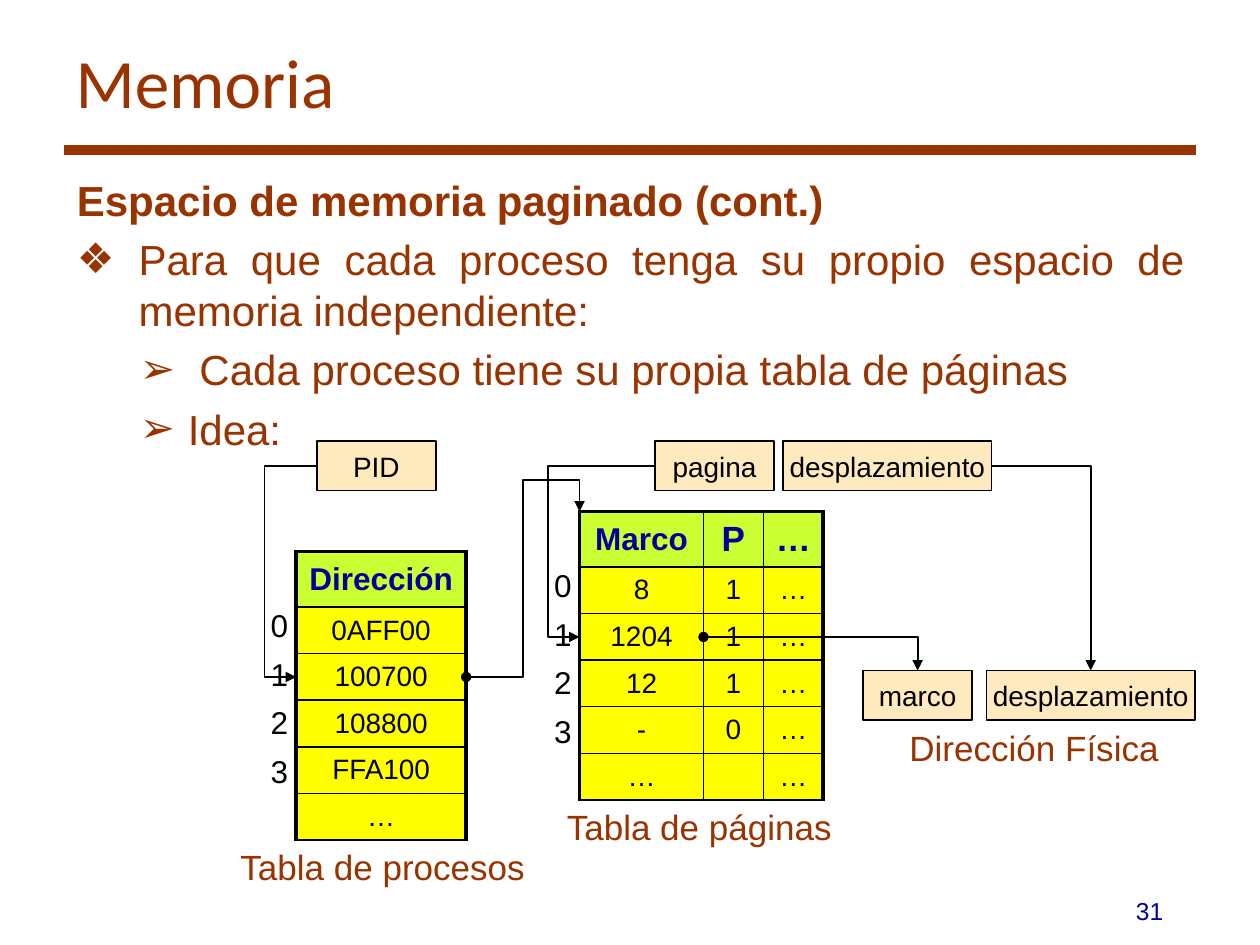
from lxml import etree
from pptx import Presentation
from pptx.dml.color import RGBColor
from pptx.enum.shapes import MSO_CONNECTOR, MSO_SHAPE
from pptx.enum.text import MSO_ANCHOR, MSO_AUTO_SIZE, PP_ALIGN
from pptx.oxml.ns import qn
from pptx.util import Pt

ELBOW, STRAIGHT = MSO_CONNECTOR.ELBOW, MSO_CONNECTOR.STRAIGHT
RECTANGLE = MSO_SHAPE.RECTANGLE
MIDDLE, TOP = MSO_ANCHOR.MIDDLE, MSO_ANCHOR.TOP
LEFT, CENTER, RIGHT, JUSTIFY = (PP_ALIGN.LEFT, PP_ALIGN.CENTER,
                                PP_ALIGN.RIGHT, PP_ALIGN.JUSTIFY)
NO_FIT = MSO_AUTO_SIZE.NONE

THEME = {
    "brown": RGBColor(0x99, 0x33, 0x00),
    "navy": RGBColor(0x00, 0x00, 0x99),
    "black": RGBColor(0x00, 0x00, 0x00),
    "cream": RGBColor(0xFF, 0xEA, 0xBF),
    "lime": RGBColor(0xCC, 0xFF, 0x33),
    "yellow": RGBColor(0xFF, 0xFF, 0x00),
    "title": {"name": "Calibri", "size": Pt(39.6)},
    "body": {"name": "Arial", "size": Pt(24)},
    "caption": {"name": "Arial", "size": Pt(20)},
    "index": {"name": "Arial", "size": Pt(18)},
    "cell": {"name": "Arial", "size": Pt(16)},
    "number": {"name": "Arial", "size": Pt(14)},
    "thick": 2.25, "thin": 1,
}

# Content: text, bullet, level, left margin, first-line indent, bold
TITLE = "Memoria"
BODY = [
    ("Espacio de memoria paginado (cont.)", None, 0, 0, 0, True),
    ("Para que cada proceso tenga su propio espacio de memoria independiente:",
     "❖", 0, 35.3, -35.3, False),
    (" Cada proceso tiene su propia tabla de páginas", "➢", 1, 63.4, -27.4, False),
    ("Idea:", "➢", 1, 63.4, -27.4, False),
]
PAGE_TABLE = {
    "left": 331.2, "top": 292.3, "widths": [70.8, 34.2, 34.2], "header_sizes": [18, 20, 20],
    "rows": [["Marco", "P", "…"], ["8", "1", "…"], ["1204", "1", "…"],
             ["12", "1", "…"], ["-", "0", "…"], ["…", "", "…"]],
}
PROCESS_TABLE = {
    "left": 169.2, "top": 315.2, "widths": [97.2], "header_sizes": [18],
    "rows": [["Dirección"], ["0AFF00"], ["100700"], ["108800"], ["FFA100"], ["…"]],
}
HEADER_HEIGHT, ROW_HEIGHT = 31.7, 26.64
BOX_HEIGHT, LOGICAL_TOP, PHYSICAL_TOP = 28.4, 252, 383.2
BOXES = {  # text, left, top, width
    "pid": ("PID", 181.2, LOGICAL_TOP, 67.8),
    "page": ("pagina", 374.4, LOGICAL_TOP, 67.8),
    "offset": ("desplazamiento", 447.6, LOGICAL_TOP, 119),
    "frame": ("marco", 493.2, PHYSICAL_TOP, 62.4),
    "physical_offset": ("desplazamiento", 563.8, PHYSICAL_TOP, 119),
}
CAPTIONS = [  # text, left, top, width
    ("Tabla de procesos", 130.3, 479.5, 181),
    ("Tabla de páginas", 316.8, 457, 170),
    ("Dirección Física", 512.6, 411.8, 193),
]


def set_values(target, values):
    for name, value in values.items():
        setattr(target, name, value)


def write(para, text, style, color, align=LEFT, bold=False):
    para.alignment = align
    span = para.add_run()
    span.text = text
    set_values(span.font, {**style, "bold": bold})
    span.font.color.rgb = color


def add_label(slide, text, left, top, width, height, style, color, align=LEFT):
    box = slide.shapes.add_textbox(Pt(left), Pt(top), Pt(width), Pt(height))
    box.text_frame.word_wrap = True
    write(box.text_frame.paragraphs[0], text, style, color, align)


def place(shape, left, top, width, height):
    set_values(shape, {"left": Pt(left), "top": Pt(top),
                       "width": Pt(width), "height": Pt(height)})


def add_bullet(para, bullet, margin, indent):
    properties = para._p.get_or_add_pPr()
    properties.set("marL", str(Pt(margin)))
    properties.set("indent", str(Pt(indent)))
    if bullet:
        etree.SubElement(properties, qn("a:buFont"), typeface="Arial")
        etree.SubElement(properties, qn("a:buChar"), char=bullet)
    else:
        etree.SubElement(properties, qn("a:buNone"))


def fill_body(body):
    place(body, 36.7, 96, 647.3, 88.6)
    frame = body.text_frame
    set_values(frame, {"auto_size": NO_FIT, "word_wrap": True, "vertical_anchor": TOP})
    for number, (text, bullet, level, margin, indent, bold) in enumerate(BODY):
        para = frame.add_paragraph() if number else frame.paragraphs[0]
        add_bullet(para, bullet, margin, indent)
        set_values(para, {"level": level, "space_before": Pt(5.2 if number else 0)})
        write(para, text, THEME["body"], THEME["brown"], JUSTIFY, bold)


def set_border(cell, side, width):
    line = etree.SubElement(cell._tc.get_or_add_tcPr(), qn(f"a:ln{side}"), w=str(Pt(width)))
    fill = etree.SubElement(line, qn("a:solidFill"))
    etree.SubElement(fill, qn("a:srgbClr"), val=str(THEME["black"]))


def add_memory_table(slide, data):
    rows, widths = data["rows"], data["widths"]
    heights = [HEADER_HEIGHT] + [ROW_HEIGHT] * (len(rows) - 1)
    table = slide.shapes.add_table(len(rows), len(widths), Pt(data["left"]), Pt(data["top"]),
                                   Pt(sum(widths)), Pt(sum(heights))).table
    for column, width in zip(table.columns, widths):
        column.width = Pt(width)
    for r, (row, height) in enumerate(zip(rows, heights)):
        table.rows[r].height = Pt(height)
        for c, text in enumerate(row):
            cell = table.cell(r, c)
            cell.vertical_anchor = MIDDLE
            outer = {"L": c == 0, "R": c == len(widths) - 1, "T": r == 0, "B": False}
            for side, is_outer in outer.items():
                set_border(cell, side, THEME["thick" if is_outer else "thin"])
            cell.fill.solid()
            cell.fill.fore_color.rgb = THEME["yellow" if r else "lime"]
            para = cell.text_frame.paragraphs[0]
            size = THEME["cell"]["size"] if r else Pt(data["header_sizes"][c])
            if text:
                write(para, text, {**THEME["cell"], "size": size},
                      THEME["black" if r else "navy"], CENTER, r == 0)
            else:
                etree.SubElement(para._p, qn("a:endParaRPr"), sz=str(int(size.pt * 100)))
    for index in range(4):
        add_label(slide, str(index), data["left"] - 21.6, data["top"] + 27.6 + 27.8 * index,
                  24.5, 28.8, THEME["index"], THEME["black"])


def add_box(slide, text, left, top, width):
    box = slide.shapes.add_shape(RECTANGLE, Pt(left), Pt(top), Pt(width), Pt(BOX_HEIGHT))
    box.shadow.inherit = False
    box.fill.solid()
    box.fill.fore_color.rgb = THEME["cream"]
    box.line.color.rgb = THEME["black"]
    box.line.width = Pt(THEME["thin"])
    set_values(box.text_frame, {"word_wrap": False, "vertical_anchor": MIDDLE})
    write(box.text_frame.paragraphs[0], text, THEME["cell"], THEME["black"], CENTER)


def add_line(slide, kind, start, end, color, width):
    line = slide.shapes.add_connector(kind, *map(Pt, start + end))
    line.line.color.rgb = color
    line.line.width = Pt(width)
    etree.SubElement(line._element.spPr, qn("a:effectLst"))
    return line


def add_arrow(slide, start, end, lanes=(), dot=False):
    """Elbow arrow; lanes holds the x, then the y, of its inner segments."""
    arrow = add_line(slide, ELBOW, start, end, THEME["black"], THEME["thin"])
    geometry = arrow._element.spPr.find(qn("a:prstGeom"))
    geometry.set("prst", f"bentConnector{len(lanes) + 2}")
    guides = geometry.find(qn("a:avLst"))
    for number, (lane, first, last) in enumerate(zip(lanes, start, end), 1):
        ratio = round((lane - first) / (last - first) * 100000)
        etree.SubElement(guides, qn("a:gd"), name=f"adj{number}" if len(lanes) > 1 else "adj1",
                         fmla=f"val {ratio}")
    outline = arrow.line._get_or_add_ln()
    if dot:
        etree.SubElement(outline, qn("a:headEnd"), type="oval")
    etree.SubElement(outline, qn("a:tailEnd"), type="triangle")


def side(name, across, down):
    """Point of a box at the given fractions of its width and height."""
    _, left, top, width = BOXES[name]
    return left + width * across, top + BOX_HEIGHT * down


def entry(data, columns):
    """Point on the row of index 1, after the given number of columns."""
    return (data["left"] + sum(data["widths"][:columns]),
            data["top"] + HEADER_HEIGHT + ROW_HEIGHT * 1.5)


def main():
    deck = Presentation()
    deck.slide_width, deck.slide_height = Pt(720), Pt(540)
    slide = deck.slides.add_slide(deck.slide_layouts[1])
    title, body = slide.placeholders
    place(title, 36, 21.6, 648, 49.7)
    set_values(title.text_frame, {"auto_size": NO_FIT, "vertical_anchor": MIDDLE})
    write(title.text_frame.paragraphs[0], TITLE, THEME["title"], THEME["brown"])
    fill_body(body)
    add_line(slide, STRAIGHT, (36.7, 85.7), (683.3, 85.7), THEME["brown"], 6)
    for data in (PAGE_TABLE, PROCESS_TABLE):
        add_memory_table(slide, data)
    for box in BOXES.values():
        add_box(slide, *box)
    for caption in CAPTIONS:
        add_label(slide, *caption, 28, THEME["caption"], THEME["brown"])
    add_label(slide, "31", 614.9, 508.3, 56.9, 20.9, THEME["number"], THEME["navy"], RIGHT)

    add_arrow(slide, side("pid", 0, 0.5), entry(PROCESS_TABLE, 0), [151.2])
    add_arrow(slide, entry(PROCESS_TABLE, 1), (PAGE_TABLE["left"], PAGE_TABLE["top"]),
              [298.8, 274.3], dot=True)
    add_arrow(slide, side("page", 0, 0.5), entry(PAGE_TABLE, 0), [313.2])
    add_arrow(slide, entry(PAGE_TABLE, 1), side("frame", 0.5, 0), dot=True)
    add_arrow(slide, side("offset", 1, 0.5), side("physical_offset", 0.5, 0))
    deck.save("out.pptx")


if __name__ == "__main__":
    main()
